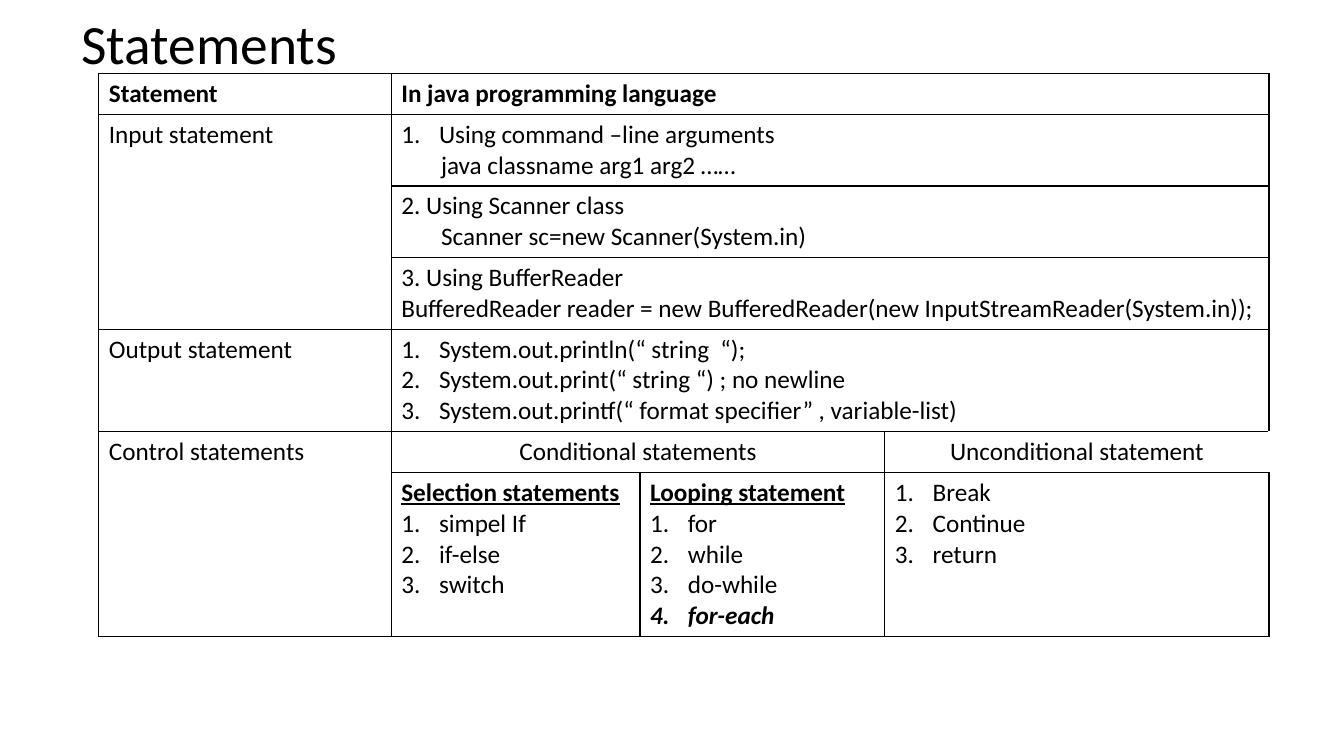
from lxml import etree
from pptx import Presentation
from pptx.dml.color import RGBColor
from pptx.enum import text
from pptx.oxml import parse_xml
from pptx.oxml.ns import nsdecls, qn
from pptx.util import Cm, Pt

INK, PAPER = "000000", "FFFFFF"
FONT = "Calibri"


def style_font(font, size):
    font.name, font.size = FONT, Pt(size)
    font.color.rgb = RGBColor.from_string(INK)


def add_border(cell, side, colour):
    cell._tc.get_or_add_tcPr().append(parse_xml(
        f'<a:ln{side} {nsdecls("a")} w="12700"><a:solidFill>'
        f'<a:srgbClr val="{colour}"/></a:solidFill></a:ln{side}>'))


deck = Presentation()
deck.slide_width, deck.slide_height = Cm(33.87), Cm(19.05)
page = deck.slides.add_slide(deck.slide_layouts[6])

# Title
title = page.shapes.add_textbox(Cm(1.8), Cm(0.41), Cm(29.21), Cm(1.52))
frame = title.text_frame
frame.word_wrap = True
frame.vertical_anchor = text.MSO_ANCHOR.MIDDLE
frame.text = "Statements"
frame.paragraphs[0].line_spacing = 0.9
style_font(frame.paragraphs[0].runs[0].font, 39.6)

# Cell contents: row, column, rows spanned, columns spanned, lines of (style, text)
contents = [
    (0, 0, 1, 1, [("bold", "Statement")]),
    (0, 1, 1, 3, [("bold", "In java programming language")]),
    (1, 0, 3, 1, [("plain", "Input statement")]),
    (1, 1, 1, 3, [("number", "Using command –line arguments"),
                  ("indent", "java classname arg1 arg2 ……")]),
    (2, 1, 1, 3, [("plain", "2. Using Scanner class"),
                  ("indent", "Scanner sc=new Scanner(System.in)")]),
    (3, 1, 1, 3, [("plain", "3. Using BufferReader"),
                  ("plain", "BufferedReader reader = new BufferedReader"
                            "(new InputStreamReader(System.in));")]),
    (4, 0, 1, 1, [("plain", "Output statement")]),
    (4, 1, 1, 3, [("number", "System.out.println(“ string  “);"),
                  ("number", "System.out.print(“ string “) ; no newline"),
                  ("number", "System.out.printf(“ format specifier” , variable-list)")]),
    (5, 0, 2, 1, [("plain", "Control statements")]),
    (5, 1, 1, 2, [("center", "Conditional statements")]),
    (5, 3, 1, 1, [("center", "Unconditional statement")]),
    (6, 1, 1, 1, [("bold underline", "Selection statements"), ("number", "simpel If"),
                  ("number", "if-else"), ("number", "switch")]),
    (6, 2, 1, 1, [("bold underline", "Looping statement"), ("number", "for"),
                  ("number", "while"), ("number", "do-while"),
                  ("number bold italic", "for-each")]),
    (6, 3, 1, 1, [("number", "Break"), ("number", "Continue"), ("number", "return")]),
]

# Table grid: row height follows the number of text lines
column_widths = [7.37, 6.27, 6.17, 9.68]
row_lines = [1, 2, 2, 2, 3, 1, 5]
row_heights = [1.03 + 0.775 * (lines - 1) for lines in row_lines]
table = page.shapes.add_table(
    len(row_heights), len(column_widths), Cm(2.49), Cm(1.85),
    Cm(sum(column_widths)), Cm(sum(row_heights))).table
table.first_row = table.horz_banding = False
for column, width in zip(table.columns, column_widths):
    column.width = Cm(width)
for row, height in zip(table.rows, row_heights):
    row.height = Cm(height)

# Borders: the unconditional heading is open on its right
for r in range(len(row_heights)):
    for c in range(len(column_widths)):
        cell = table.cell(r, c)
        for side in "LRTB":
            add_border(cell, side, PAPER if (r, c, side) == (5, 3, "R") else INK)
        cell.fill.background()

# Cell text
for r, c, rows, columns, lines in contents:
    cell = table.cell(r, c)
    if rows * columns > 1:
        cell.merge(table.cell(r + rows - 1, c + columns - 1))
    cell.text_frame.text = "\n".join(line for _, line in lines)
    for paragraph, (style, _) in zip(cell.text_frame.paragraphs, lines):
        properties = paragraph._p.get_or_add_pPr()
        if "number" in style:
            properties.set("marL", str(Cm(0.95)))
            properties.set("indent", str(-Cm(0.95)))
            etree.SubElement(properties, qn("a:buFont"), typeface="+mj-lt")
            etree.SubElement(properties, qn("a:buAutoNum"), type="arabicPeriod")
        elif "indent" in style:
            properties.set("marL", str(Cm(1)))
            properties.set("indent", "0")
        elif "center" in style:
            paragraph.alignment = text.PP_ALIGN.CENTER
        font = paragraph.runs[0].font
        style_font(font, 18)
        font.bold = "bold" in style
        font.italic = "italic" in style
        font.underline = "underline" in style

deck.save("out.pptx")
